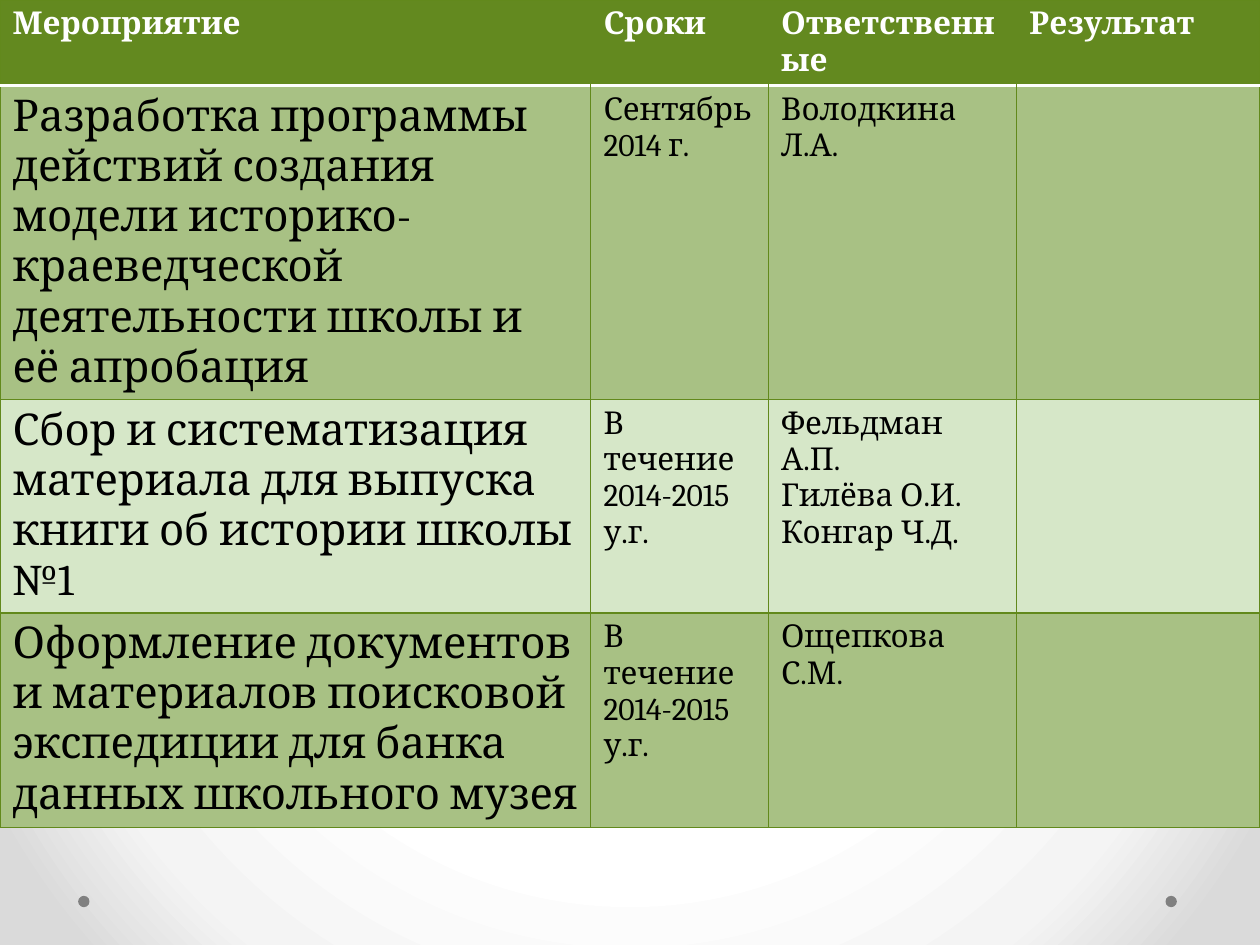
from pptx import Presentation
from pptx.dml.color import RGBColor as RGB
from pptx.enum.shapes import MSO_SHAPE as Kind
from pptx.enum.text import PP_ALIGN as Align
from pptx.oxml import parse_xml
from pptx.oxml.ns import nsdecls, qn
from pptx.util import Inches, Pt

GREEN, EDGE, WHITE, BLACK = "63891F", "62891C", "FFFFFF", "000000"
DARK, PALE = "A8C184", "D6E7C8"
FONT = "Cambria"
COLS = [4.69, 1.41, 1.97, 1.93]
ROWS = [0.68, 2.49, 1.69, 1.7]
PLAN = [
    ["Мероприятие", "Сроки", "Ответственные", "Результат"],
    ["Разработка программы действий создания модели историко-краеведческой "
     "деятельности школы и её апробация",
     "Сентябрь 2014 г.", "Володкина Л.А.", ""],
    ["Сбор и систематизация материала для выпуска книги об истории школы №1",
     "В течение 2014-2015 у.г.", "Фельдман А.П.\nГилёва О.И.\nКонгар Ч.Д.", ""],
    ["Оформление документов и материалов поисковой экспедиции для банка "
     "данных школьного музея",
     "В течение 2014-2015 у.г.", "Ощепкова С.М.", ""],
]


def color(code):
    return RGB.from_string(code)


def paint(fill, code):
    fill.solid()
    fill.fore_color.rgb = color(code)


def edge(cell, side, code, width):
    """Draw one cell border; without a colour the border is hidden."""
    ink = (f'<a:solidFill><a:srgbClr val="{code}"/></a:solidFill>'
           if code else "<a:noFill/>")
    cell._tc.get_or_add_tcPr().append(parse_xml(
        f'<a:ln{side} {nsdecls("a")} w="{Pt(width)}">{ink}</a:ln{side}>'))


def backdrop(slide):
    """Radial gradient, white in the middle and grey at the rim."""
    slide.background.fill.gradient()
    grad = slide.element.find(".//" + qn("a:gradFill"))
    stops = "".join(
        f'<a:gs pos="{pos * 1000}"><a:srgbClr val="{code}"/></a:gs>'
        for pos, code in [(50, WHITE), (76, "F4F4F4"), (92, "DADADA")])
    grad.getparent().replace(grad, parse_xml(
        f'<a:gradFill {nsdecls("a")} rotWithShape="1">'
        f'<a:gsLst>{stops}</a:gsLst><a:path path="circle">'
        '<a:fillToRect l="50000" t="50000" r="50000" b="50000"/>'
        '</a:path></a:gradFill>'))


def dots(slide, left, top, width, size):
    """A grey dot at each end of the footer box."""
    for x in (left, left + width - size):
        dot = slide.shapes.add_shape(
            Kind.OVAL, Inches(x), Inches(top), Inches(size), Inches(size))
        dot.shadow.inherit = False
        paint(dot.fill, "808080")
        dot.line.fill.background()


def write(cell, text, form):
    cell.text = text
    for para in cell.text_frame.paragraphs:
        for name, value in form.items():
            setattr(para.font, name, value)
            for run in para.runs:
                setattr(run.font, name, value)
        for font in [para.font] + [run.font for run in para.runs]:
            font.color.rgb = color(WHITE if form["bold"] else BLACK)


def border(cell, row, col):
    """Green grid, no dividers in the header, white rule below it."""
    head, last = row == 0, len(COLS) - 1
    rule = (WHITE, 2.25)
    line = (EDGE, 0.75)
    none = (None, 0.75)
    edge(cell, "L", *(none if head and col > 0 else line))
    edge(cell, "R", *(none if head and col < last else line))
    edge(cell, "T", *(rule if row == 1 else line))
    edge(cell, "B", *(rule if head else line))


def schedule(slide, left, top):
    frame = slide.shapes.add_table(
        len(ROWS), len(COLS), Inches(left), Inches(top),
        Inches(sum(COLS)), Inches(sum(ROWS)))
    table = frame.table
    table.horz_banding = False
    for col, width in zip(table.columns, COLS):
        col.width = Inches(width)
    for row, height in zip(table.rows, ROWS):
        row.height = Inches(height)

    for r, texts in enumerate(PLAN):
        for c, text in enumerate(texts):
            cell = table.cell(r, c)
            big = r > 0 and c == 0
            write(cell, text, {"name": FONT, "size": Pt(25 if big else 18),
                               "bold": r == 0})
            border(cell, r, c)
            paint(cell.fill, GREEN if r == 0 else DARK if r % 2 else PALE)
    table.cell(0, 2).text_frame.paragraphs[0].alignment = Align.JUSTIFY


def main():
    deck = Presentation()
    deck.slide_width, deck.slide_height = Inches(10), Inches(7.5)
    slide = deck.slides.add_slide(deck.slide_layouts[6])
    backdrop(slide)
    dots(slide, 0.62, 7.11, 8.72, 0.09)
    schedule(slide, 0, 0)
    deck.save("out.pptx")


if __name__ == "__main__":
    main()
